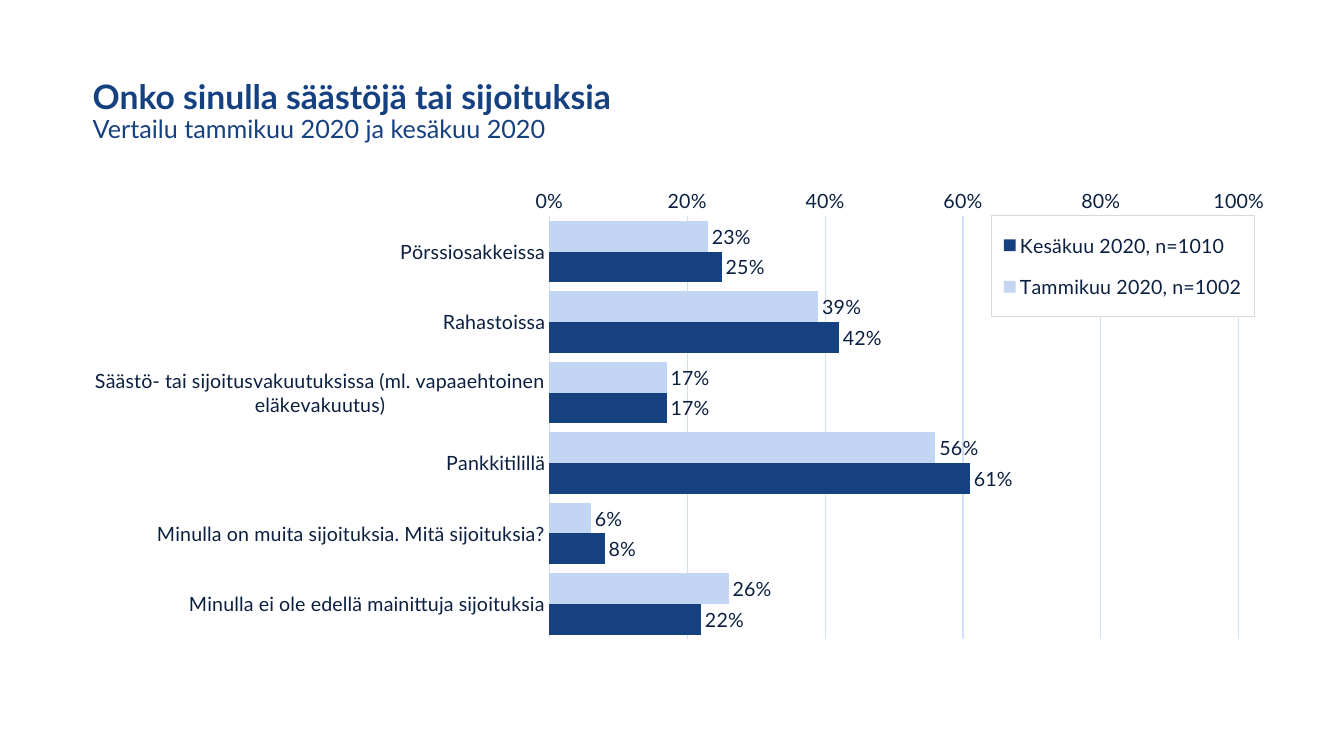
from dataclasses import dataclass

from lxml import etree
from pptx import Presentation
from pptx import util as u
from pptx.chart.data import CategoryChartData
from pptx.dml.color import RGBColor
from pptx.enum import chart as ce, text
from pptx.oxml import parse_xml
from pptx.oxml.ns import nsdecls, qn


@dataclass(frozen=True)
class Theme:
    face: str = "Lato"
    navy: str = "164180"
    pale: str = "C2D6F4"
    ink: str = "0B2040"
    grid: str = "D1E0F7"
    edge: str = "D9D9D9"
    head: int = 24
    sub: int = 18
    body: int = 14
    rule: float = 0.75


TITLE = ("Onko sinulla säästöjä tai sijoituksia", "Vertailu tammikuu 2020 ja kesäkuu 2020")
GROUPS = (
    "Pörssiosakkeissa",
    "Rahastoissa",
    "Säästö- tai sijoitusvakuutuksissa (ml. vapaaehtoinen eläkevakuutus)",
    "Pankkitilillä",
    "Minulla on muita sijoituksia. Mitä sijoituksia?",
    "Minulla ei ole edellä mainittuja sijoituksia",
)
SERIES = (
    ("Tammikuu 2020, n=1002", (0.23, 0.39, 0.17, 0.56, 0.06, 0.26), "pale"),
    ("Kesäkuu 2020, n=1010", (0.25, 0.42, 0.17, 0.61, 0.08, 0.22), "navy"),
)


def apply(item, **values):
    for name, value in values.items():
        setattr(item, name, value)


class Deck:
    def __init__(self, theme):
        self.theme = theme
        self.show = Presentation()
        apply(self.show, slide_width=u.Inches(13.33), slide_height=u.Inches(7.5))
        self.slide = self.show.slides.add_slide(self.show.slide_layouts[5])

    def box(self, left, top, width, height):
        wide, high = self.show.slide_width, self.show.slide_height
        return [round(n) for n in (left * wide, top * high, width * wide, height * high)]

    def font(self, font, size, color, bold=False):
        apply(font, name=self.theme.face, size=u.Pt(size), bold=bold)
        font.color.rgb = RGBColor.from_string(color)

    def line(self, line, color):
        line.color.rgb = RGBColor.from_string(color)
        line.width = u.Pt(self.theme.rule)

    def title(self, lines, area):
        shape = self.slide.shapes.title
        apply(shape, **dict(zip(("left", "top", "width", "height"), self.box(*area))))
        frame = shape.text_frame
        apply(frame, word_wrap=True, auto_size=text.MSO_AUTO_SIZE.NONE,
              vertical_anchor=text.MSO_ANCHOR.MIDDLE)
        para = frame.paragraphs[0]
        apply(para, alignment=text.PP_ALIGN.LEFT, line_spacing=0.9)
        sizes = (self.theme.head, self.theme.sub)
        for row, (words, size) in enumerate(zip(lines, sizes)):
            if row:
                para.add_line_break()
            run = para.add_run()
            run.text = words
            self.font(run.font, size, self.theme.navy, row == 0)

    def place(self, part, index, area, inner=False):
        for old in part.findall(qn("c:layout")):
            part.remove(old)
        layout = parse_xml(f"<c:layout {nsdecls('c')}><c:manualLayout/></c:layout>")
        values = {"layoutTarget": "inner"} if inner else {}
        values |= {"xMode": "edge", "yMode": "edge"} | dict(zip("xywh", area))
        for name, value in values.items():
            etree.SubElement(layout[0], qn(f"c:{name}")).set("val", str(value))
        part.insert(index, layout)

    def legend(self, chart, area):
        chart.has_legend = True
        legend = chart.legend
        apply(legend, position=ce.XL_LEGEND_POSITION.BOTTOM, include_in_layout=True)
        self.font(legend.font, self.theme.body, self.theme.ink)
        part = legend._element
        self.place(part, 1, area)
        frame = parse_xml(
            f'<c:spPr {nsdecls("c", "a")}><a:solidFill><a:srgbClr val="FFFFFF"/></a:solidFill>'
            f'<a:ln w="{u.Pt(self.theme.rule)}"><a:solidFill><a:srgbClr val="{self.theme.edge}"/>'
            "</a:solidFill></a:ln></c:spPr>")
        part.find(qn("c:overlay")).addnext(frame)

    def bars(self, groups, series, area, plot_area, key_area):
        look = self.theme
        data = CategoryChartData(number_format="0%")
        data.categories = groups
        for name, values, _ in series:
            data.add_series(name, values)
        chart = self.slide.shapes.add_chart(
            ce.XL_CHART_TYPE.BAR_CLUSTERED, *self.box(*area), data).chart
        chart.has_title = False
        self.font(chart.font, look.body, look.ink)
        plot = chart.plots[0]
        apply(plot, gap_width=30, overlap=0, vary_by_categories=False)
        for bar, (_, _, color) in zip(plot.series, series):
            bar.format.fill.solid()
            bar.format.fill.fore_color.rgb = RGBColor.from_string(getattr(look, color))
            labels = bar.data_labels
            apply(labels, show_value=True, number_format="0%", number_format_is_linked=False,
                  position=ce.XL_LABEL_POSITION.OUTSIDE_END)
            self.font(labels.font, look.body, look.ink)
        cats, vals = chart.category_axis, chart.value_axis
        for axis in (cats, vals):
            apply(axis, major_tick_mark=ce.XL_TICK_MARK.NONE, minor_tick_mark=ce.XL_TICK_MARK.NONE)
            self.font(axis.tick_labels.font, look.body, look.ink)
        apply(cats, reverse_order=True, has_major_gridlines=False)
        self.line(cats.format.line, look.grid)
        apply(vals, minimum_scale=0, maximum_scale=1, major_unit=0.2, has_major_gridlines=True)
        apply(vals.tick_labels, number_format="0%", number_format_is_linked=False)
        vals.format.line.fill.background()
        self.line(vals.major_gridlines.format.line, look.grid)
        self.place(chart._chartSpace.chart.plotArea, 0, plot_area, inner=True)
        self.legend(chart, key_area)


def main():
    deck = Deck(Theme())
    deck.title(TITLE, (0.0615, 0.052, 0.9085, 0.193))
    deck.bars(GROUPS, SERIES, (0.0615, 0.245, 0.886, 0.688),
              plot_area=(0.392, 0.06, 0.579, 0.813),
              key_area=(0.763, 0.059, 0.221, 0.193))
    deck.show.save("out.pptx")


if __name__ == "__main__":
    main()
